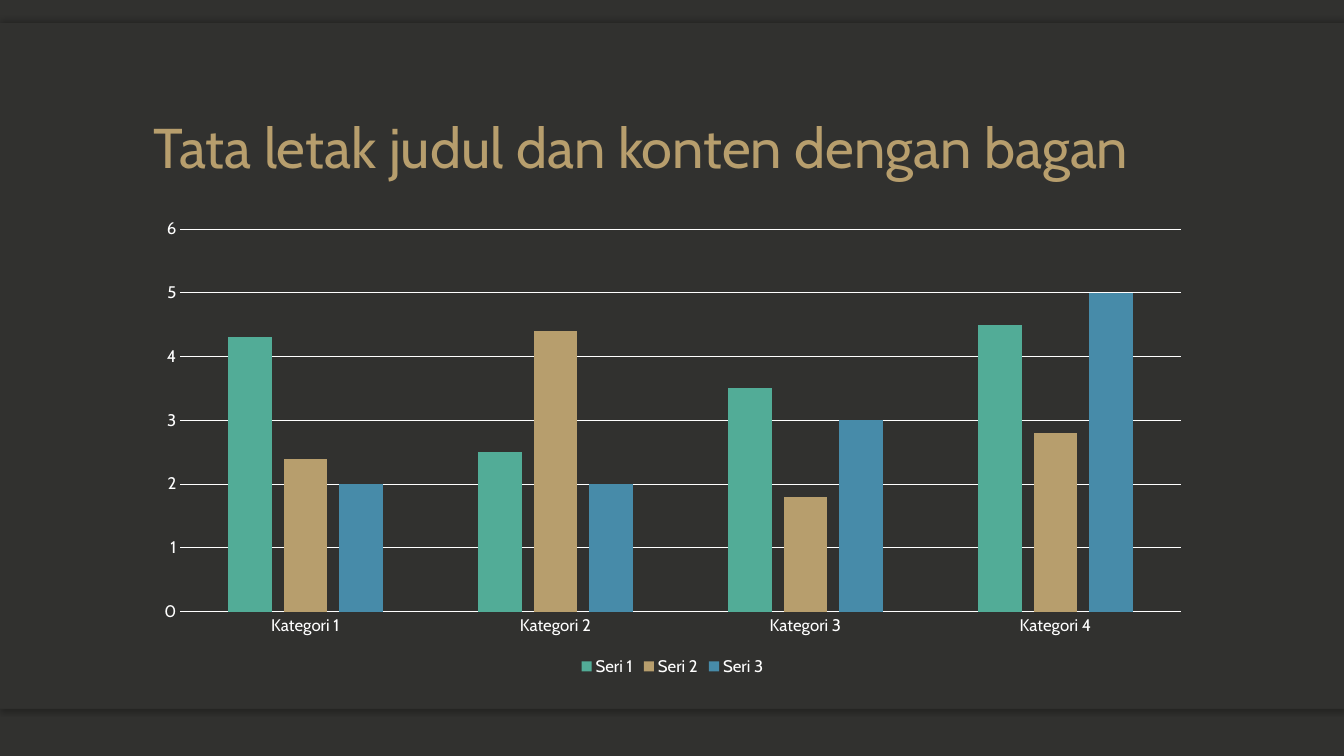
from lxml import etree
from pptx import Presentation
from pptx.chart.data import CategoryChartData
from pptx.dml.color import RGBColor
from pptx.enum.chart import XL_CHART_TYPE, XL_LEGEND_POSITION, XL_TICK_MARK
from pptx.enum.shapes import MSO_SHAPE
from pptx.enum.text import MSO_ANCHOR
from pptx.oxml.ns import qn
from pptx.util import Inches, Pt

COLUMNS = XL_CHART_TYPE.COLUMN_CLUSTERED
LEGEND_BOTTOM = XL_LEGEND_POSITION.BOTTOM
NO_TICK = XL_TICK_MARK.NONE
RECTANGLE = MSO_SHAPE.RECTANGLE
ANCHOR_BOTTOM = MSO_ANCHOR.BOTTOM

CHARCOAL = RGBColor(0x31, 0x31, 0x2F)
WHITE = RGBColor(0xFF, 0xFF, 0xFF)
GREEN = RGBColor(0x52, 0xAC, 0x97)
GOLD = RGBColor(0xB7, 0x9E, 0x6D)
BLUE = RGBColor(0x47, 0x8B, 0xA9)

WIDTH, HEIGHT = 13.33, 7.5
MARGIN, CONTENT_WIDTH = 1.42 / WIDTH, 10.5 / WIDTH
PANEL_TOP, PANEL_HEIGHT = 0.23 / HEIGHT, 6.8 / HEIGHT
EDGE_HEIGHT = 0.49 / HEIGHT
SHADOW_UP, SHADOW_DOWN = 270, 90

CATEGORIES = [f"Kategori {number}" for number in range(1, 5)]
SERIES = [
    ("Seri 1", (4.3, 2.5, 3.5, 4.5), GREEN),
    ("Seri 2", (2.4, 4.4, 1.8, 2.8), GOLD),
    ("Seri 3", (2, 2, 3, 5), BLUE),
]


def format_font(font, size=12, color=WHITE, name="Cabin"):
    font.size, font.name = Pt(size), name
    font.color.rgb = color


def write_text(frame, text, line_spacing=1.0, **font_format):
    para = frame.paragraphs[0]
    para.line_spacing = line_spacing
    span = para.add_run()
    span.text = text
    format_font(span.font, **font_format)


def draw_line(line, color=WHITE, width=0.75):
    line.color.rgb = color
    line.width = Pt(width)


class SlideBuilder:
    """Draws on one slide; every length is a share of the slide's size."""

    def __init__(self, deck):
        self.deck = deck
        self.slide = deck.slides.add_slide(deck.slide_layouts[6])
        background = self.slide.background.fill
        background.solid()
        background.fore_color.rgb = CHARCOAL

    def place(self, left, top, width, height):
        across, down = self.deck.slide_width, self.deck.slide_height
        return (round(left * across), round(top * down),
                round(width * across), round(height * down))

    def panel(self, top, height, shadow_angle=None):
        box = self.slide.shapes.add_shape(RECTANGLE, *self.place(0, top, 1, height))
        box.fill.solid()
        box.fill.fore_color.rgb = CHARCOAL
        box.line.fill.background()
        box.shadow.inherit = False
        if shadow_angle is not None:
            effects = box._element.spPr.find(qn("a:effectLst"))
            shadow = etree.SubElement(
                effects, qn("a:outerShdw"), blurRad=str(Pt(4)), dist=str(Pt(2)),
                dir=str(shadow_angle * 60000), algn="ctr", rotWithShape="0")
            color = etree.SubElement(shadow, qn("a:srgbClr"), val="000000")
            etree.SubElement(color, qn("a:alpha"), val="25000")

    def title(self, text, top, height):
        box = self.slide.shapes.add_textbox(
            *self.place(MARGIN, top, CONTENT_WIDTH, height))
        frame = box.text_frame
        frame.word_wrap = True
        frame.vertical_anchor = ANCHOR_BOTTOM
        write_text(frame, text, line_spacing=0.9, size=40, color=GOLD)

    def column_chart(self, top, height, categories, series):
        chart_data = CategoryChartData()
        chart_data.categories = categories
        for name, values, _ in series:
            chart_data.add_series(name, values)
        chart = self.slide.shapes.add_chart(
            COLUMNS, *self.place(MARGIN, top, CONTENT_WIDTH, height), chart_data).chart
        format_font(chart.font, size=10)
        chart.has_title = False
        chart.has_legend = True
        chart.legend.position = LEGEND_BOTTOM
        chart.legend.include_in_layout = False
        format_font(chart.legend.font)

        for axis in (chart.category_axis, chart.value_axis):
            axis.major_tick_mark = axis.minor_tick_mark = NO_TICK
            format_font(axis.tick_labels.font)
        draw_line(chart.category_axis.format.line)
        chart.value_axis.format.line.fill.background()
        draw_line(chart.value_axis.major_gridlines.format.line)
        chart.value_axis.minimum_scale = 0
        chart.value_axis.maximum_scale = 6
        chart.value_axis.major_unit = 1

        plot = chart.plots[0]
        plot.vary_by_categories = False
        plot.gap_width, plot.overlap = 219, -27
        for columns, (_, _, color) in zip(plot.series, series):
            columns.format.fill.solid()
            columns.format.fill.fore_color.rgb = color


def main():
    deck = Presentation()
    deck.slide_width, deck.slide_height = Inches(WIDTH), Inches(HEIGHT)
    page = SlideBuilder(deck)
    page.panel(PANEL_TOP + PANEL_HEIGHT - EDGE_HEIGHT, EDGE_HEIGHT, SHADOW_DOWN)
    page.panel(PANEL_TOP, EDGE_HEIGHT, SHADOW_UP)
    page.panel(PANEL_TOP, PANEL_HEIGHT)
    page.title("Tata letak judul dan konten dengan bagan", 0.46 / HEIGHT, 1.38 / HEIGHT)
    page.column_chart(2.08 / HEIGHT, 4.67 / HEIGHT, CATEGORIES, SERIES)
    deck.save("out.pptx")


if __name__ == "__main__":
    main()
